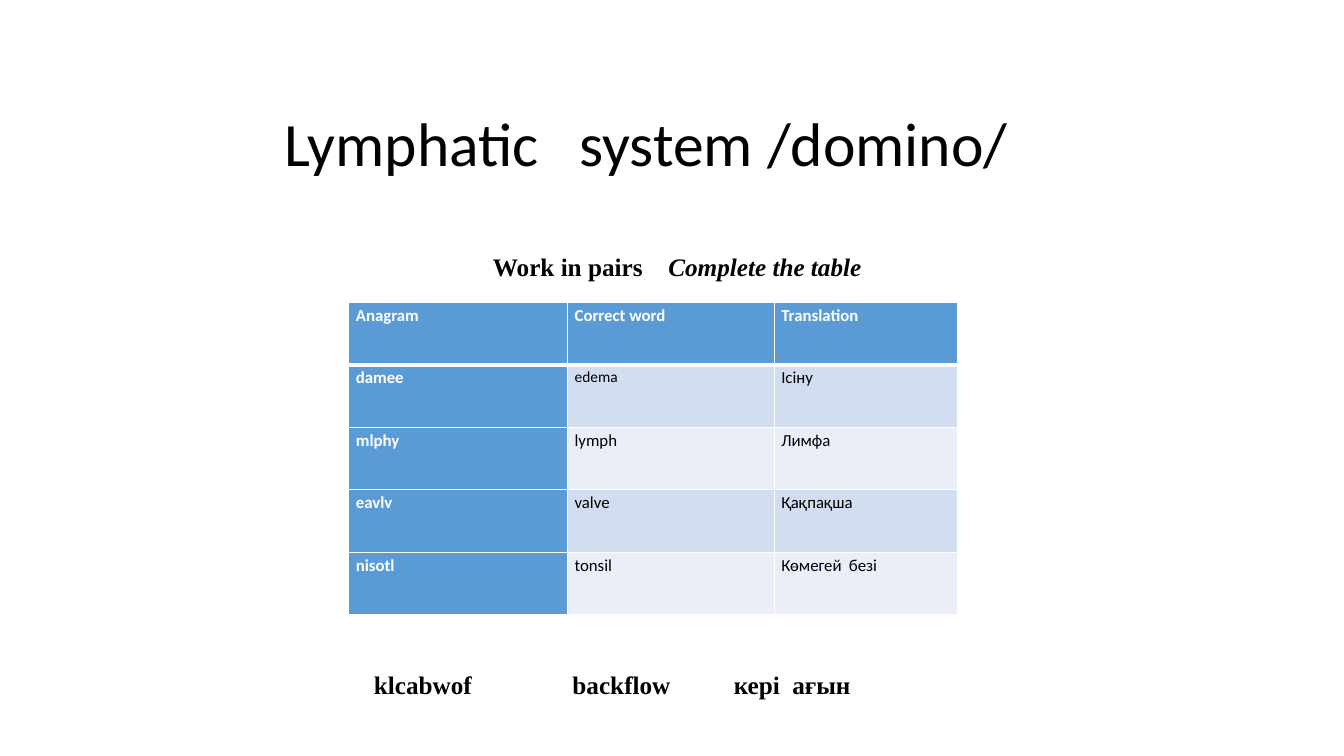
from dataclasses import dataclass

from lxml import etree
from pptx import Presentation
from pptx.dml.color import RGBColor
from pptx.enum.text import MSO_ANCHOR
from pptx.oxml.ns import qn
from pptx.util import Inches, Pt

MIDDLE = MSO_ANCHOR.MIDDLE
TOP = MSO_ANCHOR.TOP


@dataclass(frozen=True)
class Theme:
    heading_font: str = "Calibri"
    task_font: str = "Times New Roman"
    black: str = "000000"
    white: str = "FFFFFF"
    header: str = "5B9BD5"
    bands: tuple = ("D2DEEF", "EAEFF7")
    title_size: int = 44
    task_size: int = 18
    cell_size: int = 12
    small_size: int = 11


THEME = Theme()
COLUMN_WIDTHS = (2.17, 2.05, 1.82)
ROW_HEIGHT = 0.62
WORDS = (
    ("Anagram", "Correct word", "Translation"),
    ("damee", "edema", "Ісіну"),
    ("mlphy", "lymph", "Лимфа"),
    ("eavlv", "valve", "Қақпақша"),
    ("nisotl", "tonsil", "Көмегей\tбезі"),
)


def add_tabs(para, stops):
    tab_list = etree.SubElement(para._p.get_or_add_pPr(), qn("a:tabLst"))
    for stop in stops:
        etree.SubElement(tab_list, qn("a:tab"), pos=str(Inches(stop)), algn="l")


def add_span(para, text, font, size, color, bold=False, italic=False):
    span = para.add_run()
    span.text = text
    span.font.name = font
    span.font.size = Pt(size)
    span.font.color.rgb = RGBColor.from_string(color)
    span.font.bold = bold
    span.font.italic = italic


def add_text(page, left, top, width, height, stops, anchor=MIDDLE):
    box = page.shapes.add_textbox(Inches(left), Inches(top), Inches(width), Inches(height))
    frame = box.text_frame
    frame.word_wrap = True
    frame.vertical_anchor = anchor
    para = frame.paragraphs[0]
    add_tabs(para, stops)
    return para


def add_border(cell, side, width):
    line = etree.SubElement(cell._tc.get_or_add_tcPr(), qn(f"a:ln{side}"), w=str(Pt(width)))
    fill = etree.SubElement(line, qn("a:solidFill"))
    etree.SubElement(fill, qn("a:srgbClr"), val=THEME.white)


def fill_cell(cell, text, row, column):
    heading = row == 0 or column == 0
    for side in "LRTB":
        under_header = (row, side) in ((0, "B"), (1, "T"))
        add_border(cell, side, 3 if under_header else 1)
    cell.fill.solid()
    fill_color = THEME.header if heading else THEME.bands[(row - 1) % 2]
    cell.fill.fore_color.rgb = RGBColor.from_string(fill_color)
    cell.margin_left = cell.margin_right = Inches(0.07)
    cell.margin_top = cell.margin_bottom = Inches(0)
    para = cell.text_frame.paragraphs[0]
    if "\t" in text:
        add_tabs(para, [0.67])
    para.line_spacing = 1.15
    size = THEME.small_size if text == "edema" else THEME.cell_size
    color = THEME.white if heading else THEME.black
    add_span(para, text, THEME.heading_font, size, color, bold=heading)


def add_word_table(page, left, top):
    frame = page.shapes.add_table(
        len(WORDS), len(COLUMN_WIDTHS), Inches(left), Inches(top),
        Inches(sum(COLUMN_WIDTHS)), Inches(ROW_HEIGHT * len(WORDS)))
    table = frame.table
    for column, width in zip(table.columns, COLUMN_WIDTHS):
        column.width = Inches(width)
    for row, words in enumerate(WORDS):
        table.rows[row].height = Inches(ROW_HEIGHT)
        for column, text in enumerate(words):
            fill_cell(table.cell(row, column), text, row, column)


def main():
    deck = Presentation()
    deck.slide_width = Inches(13.33)
    deck.slide_height = Inches(7.5)
    page = deck.slides.add_slide(deck.slide_layouts[6])

    title = add_text(page, 2.72, 1.05, 9.7, 0.8, [2.93])
    title.line_spacing = 0.9
    add_span(title, "Lymphatic\tsystem /domino/", THEME.heading_font, THEME.title_size, THEME.black)

    add_word_table(page, 3.46, 3)

    task = add_text(page, 4.79, 2.44, 4.79, 0.4, [1.74])
    add_span(task, "Work in pairs\t", THEME.task_font, THEME.task_size, THEME.black, bold=True)
    add_span(task, "Complete the table", THEME.task_font, THEME.task_size, THEME.black,
             bold=True, italic=True)

    extra = add_text(page, 3.61, 6.59, 5.43, 0.4, [1.97, 3.57, 4.15], TOP)
    add_span(extra, "klcabwof\tbackflow\tкері\tағын", THEME.task_font, THEME.task_size,
             THEME.black, bold=True)

    deck.save("out.pptx")


if __name__ == "__main__":
    main()
